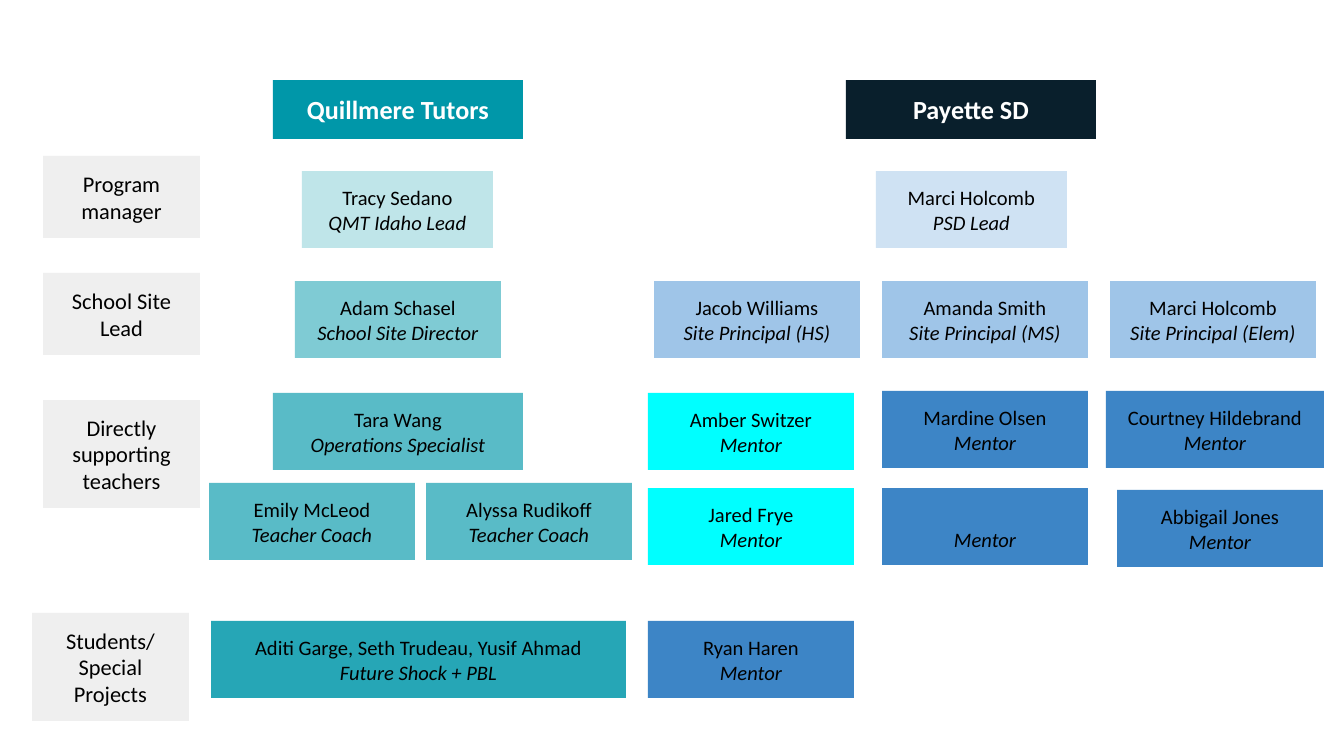
import pptx
import pptx.dml.color
import pptx.enum.shapes
import pptx.enum.text
import pptx.util

RGBColor = pptx.dml.color.RGBColor
Anchor = pptx.enum.text.MSO_ANCHOR

EMU_PER_PX = 914400 / 134.4
INSET = 13

WHITE = RGBColor(0xFF, 0xFF, 0xFF)
BLACK = RGBColor(0x00, 0x00, 0x00)
GRAY = RGBColor(0xEF, 0xEF, 0xEF)
NAVY = RGBColor(0x09, 0x1F, 0x2C)
TEAL = RGBColor(0x00, 0x97, 0xA9)
TEAL_LEAD = RGBColor(0xBF, 0xE5, 0xE9)
TEAL_SITE = RGBColor(0x7F, 0xCB, 0xD4)
TEAL_COACH = RGBColor(0x59, 0xBB, 0xC7)
TEAL_PROJECT = RGBColor(0x26, 0xA6, 0xB6)
BLUE_LEAD = RGBColor(0xCF, 0xE2, 0xF3)
BLUE_SITE = RGBColor(0x9F, 0xC5, 0xE8)
BLUE_MENTOR = RGBColor(0x3D, 0x85, 0xC6)
CYAN = RGBColor(0x00, 0xFF, 0xFF)

HEADER_FONT = {"name": "Calibri", "size": pptx.util.Pt(14), "bold": True}
LABEL_FONT = {"name": "Calibri", "size": pptx.util.Pt(12)}
NAME_FONT = {"name": "Calibri", "size": pptx.util.Pt(11)}
ROLE_FONT = {**NAME_FONT, "italic": True}


def px(length):
    return pptx.util.Emu(round(length * EMU_PER_PX))


def add_box(left, top, width, height, fill, lines, color=BLACK, anchor=Anchor.MIDDLE):
    """Add a filled rectangle; lines holds (text, font values) pairs."""
    shape = slide.shapes.add_shape(
        pptx.enum.shapes.MSO_SHAPE.RECTANGLE, px(left), px(top), px(width), px(height))
    shape.shadow.inherit = False
    shape.fill.solid()
    shape.fill.fore_color.rgb = fill
    shape.line.fill.background()
    frame = shape.text_frame
    frame.word_wrap = True
    frame.vertical_anchor = anchor
    for side in ("left", "top", "right", "bottom"):
        setattr(frame, f"margin_{side}", px(INSET))
    for index, (text, font_values) in enumerate(lines):
        paragraph = frame.add_paragraph() if index else frame.paragraphs[0]
        paragraph.alignment = pptx.enum.text.PP_ALIGN.CENTER
        run = paragraph.add_run()
        run.text = text
        for attribute, value in font_values.items():
            setattr(run.font, attribute, value)
        run.font.color.rgb = color


presentation = pptx.Presentation()
presentation.slide_width = px(1344)
presentation.slide_height = px(756)
slide = presentation.slides.add_slide(presentation.slide_layouts[6])

# Organization headers
for left, fill, text in [(273, TEAL, "Quillmere Tutors"), (846, NAVY, "Payette SD")]:
    add_box(left, 80, 250, 59, fill, [(text, HEADER_FONT)], WHITE)

# Row labels
labels = [
    (43, 156, 82, ["Program manager"]),
    (43, 273, 82, ["School Site Lead"]),
    (43, 400, 108, ["Directly supporting teachers"]),
    (32, 613, 108, ["Students/", "Special Projects"]),
]
for left, top, height, texts in labels:
    add_box(left, top, 157, height, GRAY, [(text, LABEL_FONT) for text in texts])

# People: left, top, width, fill, name, role
people = [
    # Program managers
    (302, 171, 191, TEAL_LEAD, "Tracy Sedano", "QMT Idaho Lead"),
    (876, 171, 191, BLUE_LEAD, "Marci Holcomb", "PSD Lead"),
    # School site leads
    (295, 281, 206, TEAL_SITE, "Adam Schasel", "School Site Director"),
    (654, 281, 206, BLUE_SITE, "Jacob Williams", "Site Principal (HS)"),
    (882, 281, 206, BLUE_SITE, "Amanda Smith", "Site Principal (MS)"),
    (1110, 281, 206, BLUE_SITE, "Marci Holcomb", "Site Principal (Elem)"),
    # Teacher support
    (273, 393, 250, TEAL_COACH, "Tara Wang", "Operations Specialist"),
    (209, 483, 206, TEAL_COACH, "Emily McLeod", "Teacher Coach"),
    (426, 483, 206, TEAL_COACH, "Alyssa Rudikoff", "Teacher Coach"),
    (648, 393, 206, CYAN, "Amber Switzer", "Mentor"),
    (882, 391, 206, BLUE_MENTOR, "Mardine Olsen", "Mentor"),
    (1106, 391, 218, BLUE_MENTOR, "Courtney Hildebrand", "Mentor"),
    (648, 488, 206, CYAN, "Jared Frye", "Mentor"),
    (1117, 490, 206, BLUE_MENTOR, "Abbigail Jones", "Mentor"),
    # Students and special projects
    (211, 621, 415, TEAL_PROJECT, "Aditi Garge, Seth Trudeau, Yusif Ahmad", "Future Shock + PBL"),
    (648, 621, 206, BLUE_MENTOR, "Ryan Haren", "Mentor"),
]
for left, top, width, fill, name, role in people:
    add_box(left, top, width, 77, fill, [(name, NAME_FONT), (role, ROLE_FONT)])

# Unfilled mentor position
add_box(882, 488, 206, 77, BLUE_MENTOR, [("Mentor", ROLE_FONT)], anchor=Anchor.BOTTOM)

presentation.save("out.pptx")
